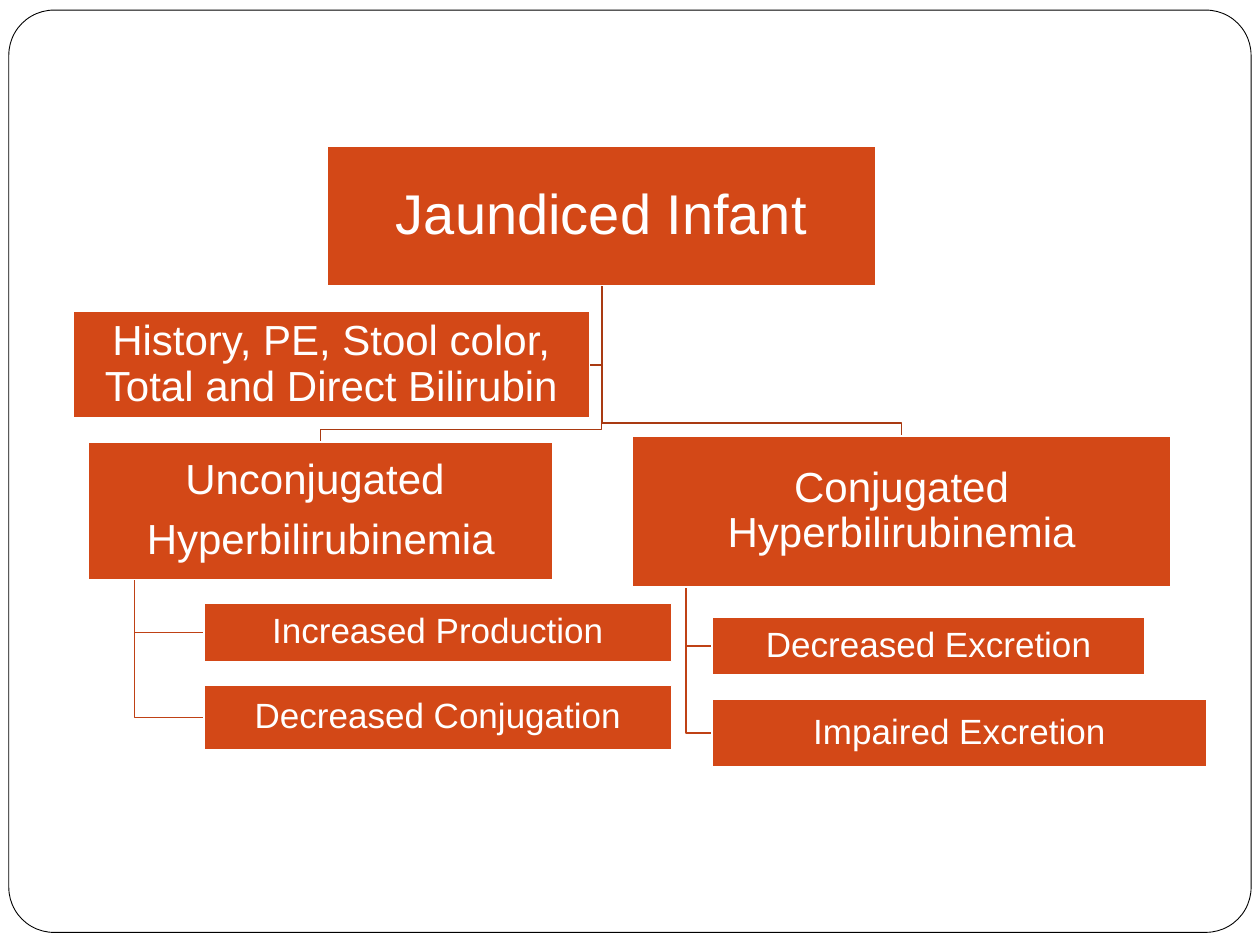
from dataclasses import dataclass

from pptx import Presentation
from pptx.dml.color import RGBColor
from pptx.enum.shapes import MSO_SHAPE
from pptx.enum.text import MSO_ANCHOR, MSO_AUTO_SIZE, PP_ALIGN
from pptx.util import Inches, Pt

RECTANGLE, ROUNDED = MSO_SHAPE.RECTANGLE, MSO_SHAPE.ROUNDED_RECTANGLE
MIDDLE, CENTER, NO_AUTOFIT = MSO_ANCHOR.MIDDLE, PP_ALIGN.CENTER, MSO_AUTO_SIZE.NONE
TITLE_ONLY = 5


@dataclass(frozen=True)
class Theme:
    font: str = "Arial"
    node: RGBColor = RGBColor(0xD3, 0x48, 0x17)
    paper: RGBColor = RGBColor(0xFF, 0xFF, 0xFF)
    frame: RGBColor = RGBColor(0, 0, 0)
    trunk: RGBColor = RGBColor(0xA9, 0x3A, 0x12)
    twig: RGBColor = RGBColor(0xBF, 0x41, 0x15)
    root_size: int = 32
    head_size: int = 24
    leaf_size: int = 20


@dataclass(frozen=True)
class Box:
    """A rectangle in inches."""
    left: float
    top: float
    width: float
    height: float

    @property
    def right(self):
        return self.left + self.width

    @property
    def bottom(self):
        return self.top + self.height

    @property
    def center(self):
        return self.left + self.width / 2

    @property
    def middle(self):
        return self.top + self.height / 2

    def emu(self):
        return [Inches(v) for v in (self.left, self.top, self.width, self.height)]


THEME = Theme()


def style_node(node, text, size, inset=0.02):
    node.fill.solid()
    node.fill.fore_color.rgb = THEME.node
    node.line.color.rgb = THEME.paper
    node.line.width = Pt(1)
    frame = node.text_frame
    frame.text = text
    frame.word_wrap = True
    frame.auto_size = NO_AUTOFIT
    frame.vertical_anchor = MIDDLE
    frame.margin_left = frame.margin_right = Inches(inset)
    frame.margin_top = frame.margin_bottom = Inches(inset)
    for paragraph in frame.paragraphs:
        paragraph.alignment = CENTER
        paragraph.line_spacing = 0.9
        paragraph.space_before = Pt(0)
        paragraph.space_after = Pt(size * 0.35)
        paragraph.font.name = THEME.font
        paragraph.font.size = Pt(size)
        paragraph.font.color.rgb = THEME.paper


def add_node(slide, box, text, size, inset=0.02):
    node = slide.shapes.add_shape(RECTANGLE, *box.emu())
    node.shadow.inherit = False
    style_node(node, text, size, inset)


def add_link(slide, points, color):
    """Draw an open right-angled line through points given in inches."""
    start, *turns = [(Inches(x), Inches(y)) for x, y in points]
    builder = slide.shapes.build_freeform(*start)
    builder.add_line_segments(turns, close=False)
    link = builder.convert_to_shape()
    link.shadow.inherit = False
    link.fill.background()
    link.line.color.rgb = color
    link.line.width = Pt(1)


def add_frame(slide, box):
    frame = slide.shapes.add_shape(ROUNDED, *box.emu())
    frame.adjustments[0] = 0.049
    frame.shadow.inherit = False
    frame.fill.background()
    frame.line.color.rgb = THEME.frame
    frame.line.width = Pt(0.5)


def add_root(slide, box, text):
    """Use the title placeholder as the top of the tree."""
    title = slide.shapes.title
    title.left, title.top, title.width, title.height = box.emu()
    style_node(title, text, THEME.root_size)


def add_workup(slide, box, root, text):
    """Place the side node that hangs left of the trunk."""
    add_link(slide, [(root.center, root.bottom), (root.center, box.middle),
                     (box.right, box.middle)], THEME.trunk)
    add_node(slide, box, text, THEME.head_size)


def add_branch(slide, box, root, text, indent, leaves):
    """Place a head node in box, with its leaves (text, gap above, width, height) below."""
    turn = box.top - 0.1
    add_link(slide, [(root.center, root.bottom), (root.center, turn),
                     (box.center, turn), (box.center, box.top)], THEME.trunk)
    stem = box.left + box.width * 0.1
    above = box.bottom
    for leaf_text, gap, width, height in leaves:
        leaf = Box(box.left + indent, above + gap, width, height)
        add_link(slide, [(stem, box.bottom), (stem, leaf.middle),
                         (leaf.left, leaf.middle)], THEME.twig)
        add_node(slide, leaf, leaf_text, THEME.leaf_size, inset=0.01)
        above = leaf.bottom
    add_node(slide, box, text, THEME.head_size)


def main():
    deck = Presentation()
    deck.slide_width, deck.slide_height = Inches(10), Inches(7.5)
    slide = deck.slides.add_slide(deck.slide_layouts[TITLE_ONLY])

    root = Box(2.6, 1.16, 4.35, 1.11)
    add_frame(slide, Box(0.07, 0.08, 9.86, 7.32))
    add_root(slide, root, "Jaundiced Infant")
    add_branch(slide, Box(5.02, 3.46, 4.27, 1.2), root,
               "Conjugated Hyperbilirubinemia", 0.63,
               [("Decreased Excretion", 0.24, 3.44, 0.46),
                ("Impaired Excretion", 0.19, 3.93, 0.54)])
    add_branch(slide, Box(0.7, 3.51, 3.69, 1.09), root,
               "Unconjugated \nHyperbilirubinemia", 0.92,
               [("Increased Production", 0.19, 3.71, 0.46),
                ("Decreased Conjugation", 0.19, 3.71, 0.51)])
    add_workup(slide, Box(0.58, 2.47, 4.1, 0.85), root,
               "History, PE, Stool color, Total and Direct Bilirubin")
    deck.save("out.pptx")


if __name__ == "__main__":
    main()
